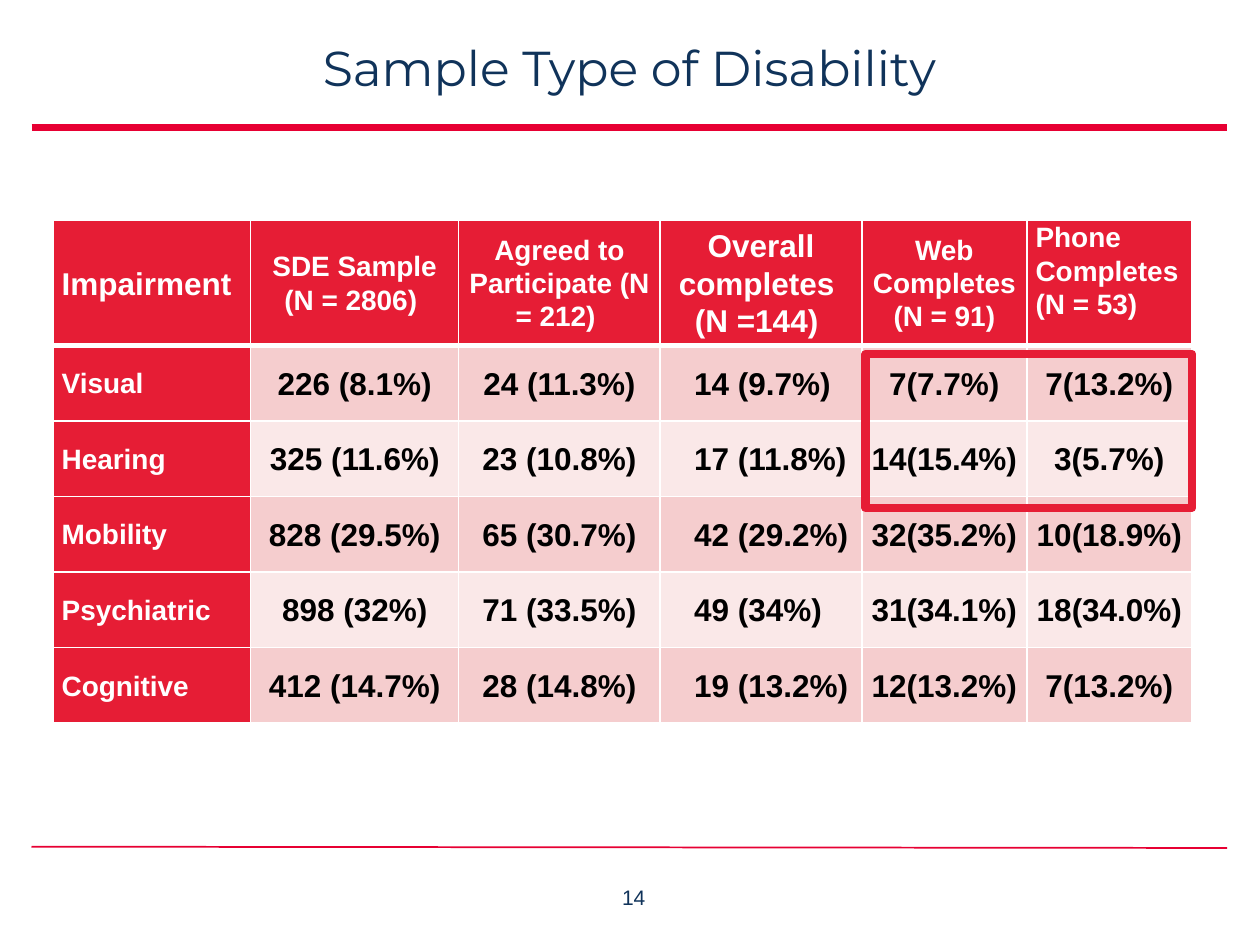
from pptx import Presentation
from pptx.dml.color import RGBColor
from pptx.enum.shapes import MSO_CONNECTOR, MSO_SHAPE
from pptx.enum.text import MSO_ANCHOR, PP_ALIGN
from pptx.oxml.ns import qn
from pptx.util import Inches, Pt
from lxml import etree

LEFT, CENTER = PP_ALIGN.LEFT, PP_ALIGN.CENTER
TOP, MIDDLE = MSO_ANCHOR.TOP, MSO_ANCHOR.MIDDLE
LINE, RECT = MSO_CONNECTOR.STRAIGHT, MSO_SHAPE.RECTANGLE

COLORS = {
    "navy": "10335A", "rule": "E70033", "red": "E61D35",
    "rose": "F5CDCE", "pale": "FAE8E8", "white": "FFFFFF", "black": "000000",
}

COLS = [1.57, 1.65, 1.6, 1.6, 1.31, 1.31]
ROWS = [0.99] + [0.6] * 5

# Header cells: text and format
HEADS = [
    ("Impairment", dict(size=18, align=LEFT, after=8)),
    ("SDE Sample (N = 2806) ", dict(after=8)),
    ("Agreed to Participate (N = 212) ", dict(after=8)),
    ("Overall completes \n(N =144) ", dict(size=18)),
    ("Web Completes (N = 91)", {}),
    ("Phone Completes (N = 53)", dict(align=LEFT)),
]
DATA = [
    ("Visual", "226 (8.1%)", "24 (11.3%)", "14 (9.7%)", "7(7.7%)", "7(13.2%)"),
    ("Hearing", "325 (11.6%)", "23 (10.8%)", "17 (11.8%)", "14(15.4%)", "3(5.7%)"),
    ("Mobility", "828 (29.5%)", "65 (30.7%)", "42 (29.2%)", "32(35.2%)", "10(18.9%)"),
    ("Psychiatric", "898 (32%)", "71 (33.5%)", "49 (34%)", "31(34.1%)", "18(34.0%)"),
    ("Cognitive", "412 (14.7%)", "28 (14.8%)", "19 (13.2%)", "12(13.2%)", "7(13.2%)"),
]


def rgb(name):
    return RGBColor.from_string(COLORS[name])


def write(frame, text, size=16, color="white", font="Arial", bold=False,
          align=CENTER, space=None, after=0, indent=0):
    """Fill a text frame, one paragraph for each line of text."""
    for i, line in enumerate(text.split("\n")):
        para = frame.paragraphs[0] if i == 0 else frame.add_paragraph()
        para.alignment = align
        para.space_after = Pt(after)
        if space:
            para.line_spacing = space
        if indent:
            props = para._p.get_or_add_pPr()
            props.set("marL", str(Inches(indent)))
            props.set("indent", "0")
        run = para.add_run()
        run.text = line
        run.font.name, run.font.size, run.font.bold = font, Pt(size), bold
        run.font.color.rgb = rgb(color)


def add_label(slide, text, box, inset=0, wrap=True, **look):
    frame = slide.shapes.add_textbox(*map(Inches, box)).text_frame
    frame.word_wrap = wrap
    frame.vertical_anchor = TOP
    frame.margin_left = frame.margin_right = Inches(inset * 2)
    frame.margin_top = frame.margin_bottom = Inches(inset)
    write(frame, text, **look)


def add_rule(slide, y, end, width):
    points = map(Inches, (0.25, y, 9.74, end))
    rule = slide.shapes.add_connector(LINE, *points)
    rule.line.color.rgb = rgb("rule")
    rule.line.width = Pt(width)
    etree.SubElement(rule._element.spPr, qn("a:effectLst"))


def add_edges(cell, base):
    """Draw white borders; base is the bottom width in points."""
    props = cell._tc.get_or_add_tcPr()
    for side, width in (("L", 1), ("R", 1), ("T", 1), ("B", base)):
        edge = etree.SubElement(props, qn("a:ln" + side), w=str(Pt(width)))
        fill = etree.SubElement(edge, qn("a:solidFill"))
        etree.SubElement(fill, qn("a:srgbClr"), val=COLORS["white"])


def set_cell(cell, text, fill, base=1, anchor=MIDDLE, **look):
    add_edges(cell, base)
    cell.fill.solid()
    cell.fill.fore_color.rgb = rgb(fill)
    cell.margin_left = cell.margin_right = Inches(0.07)
    cell.margin_top = cell.margin_bottom = 0
    cell.vertical_anchor = anchor
    write(cell.text_frame, text, bold=True, space=1.07, **look)


def add_grid(slide):
    box = map(Inches, (0.42, 1.75, sum(COLS), sum(ROWS)))
    table = slide.shapes.add_table(len(ROWS), len(COLS), *box).table
    for col, width in zip(table.columns, COLS):
        col.width = Inches(width)
    for row, height in zip(table.rows, ROWS):
        row.height = Inches(height)

    # Header row
    last = len(COLS) - 1
    for c, (text, look) in enumerate(HEADS):
        anchor = TOP if c == last else MIDDLE
        set_cell(table.cell(0, c), text, "red", base=3, anchor=anchor, **look)

    # Body rows: red names, banded values
    for r, (name, *values) in enumerate(DATA, 1):
        set_cell(table.cell(r, 0), name, "red", align=LEFT)
        band = "rose" if r % 2 else "pale"
        for c, value in enumerate(values, 1):
            look = dict(align=LEFT, indent=0.2) if c == 3 else {}
            set_cell(table.cell(r, c), value, band, size=18, color="black", **look)


def add_frame(slide, box):
    frame = slide.shapes.add_shape(RECT, *map(Inches, box))
    frame.shadow.inherit = False
    frame.fill.background()
    frame.line.color.rgb = rgb("red")
    frame.line.width = Pt(4.72)


def main():
    deck = Presentation()
    deck.slide_width, deck.slide_height = Inches(10), Inches(7.5)
    slide = deck.slides.add_slide(deck.slide_layouts[6])

    # Rules and page number
    add_rule(slide, 1.01, 1.01, 4)
    add_rule(slide, 6.72, 6.73, 1)
    add_label(slide, "14", (4.53, 6.97, 1, 0.38), inset=0.05, wrap=False,
              size=12, color="navy")

    # Title
    add_label(slide, "Sample Type of Disability", (0.25, 0.3, 9.49, 0.71),
              size=28, color="navy", font="Montserrat")

    # Table and highlight
    add_grid(slide)
    add_frame(slide, (6.87, 2.81, 2.59, 1.22))

    deck.save("out.pptx")


if __name__ == "__main__":
    main()
